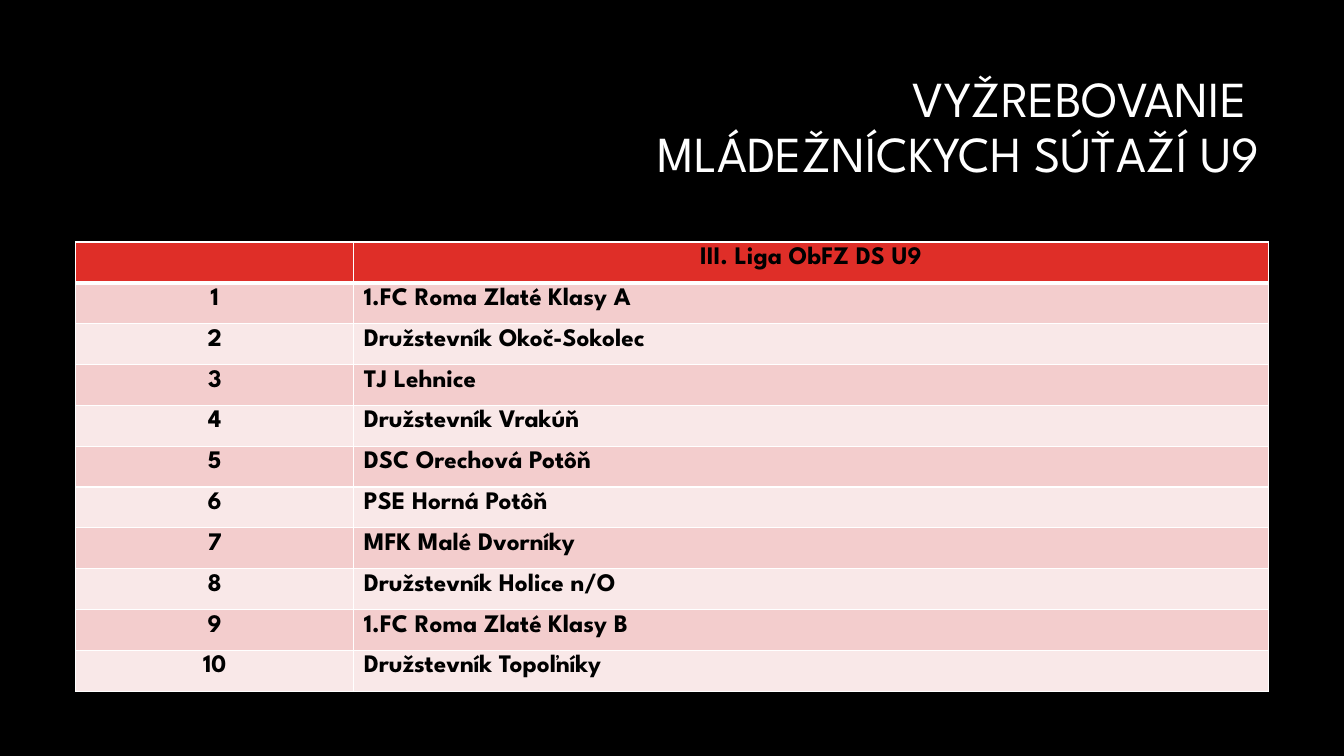
import pptx
import pptx.util
import pptx.dml.color
import pptx.enum.text
import pptx.oxml
import pptx.oxml.ns
import lxml.etree

Inches = pptx.util.Inches
ALIGN = pptx.enum.text.PP_ALIGN
FACE = "League Spartan"
BLACK, WHITE, RED = "000000", "FFFFFF", "DF2E28"
BANDS = ["F3CDCD", "F9E8E8"]
HEAD = "III. Liga ObFZ DS U9"
TEAMS = [
    "1.FC Roma Zlaté Klasy A",
    "Družstevník Okoč-Sokolec",
    "TJ Lehnice",
    "Družstevník Vrakúň",
    "DSC Orechová Potôň",
    "PSE Horná Potôň",
    "MFK Malé Dvorníky",
    "Družstevník Holice n/O",
    "1.FC Roma Zlaté Klasy B",
    "Družstevník Topoľníky",
]


def paint(fill, tint):
    fill.solid()
    fill.fore_color.rgb = pptx.dml.color.RGBColor.from_string(tint)


def style(para, size, tint, bold, align):
    para.alignment = align
    font = para.font
    font.name = FACE
    font.size = pptx.util.Pt(size)
    font.bold = bold
    paint(font.fill, tint)


def edge(cell, side, width):
    props = cell._tc.get_or_add_tcPr()
    line = lxml.etree.SubElement(props, pptx.oxml.ns.qn("a:ln" + side))
    line.set("w", str(pptx.util.Pt(width)))
    fill = lxml.etree.SubElement(line, pptx.oxml.ns.qn("a:solidFill"))
    tint = lxml.etree.SubElement(fill, pptx.oxml.ns.qn("a:srgbClr"))
    tint.set("val", WHITE)


def add_title(slide):
    title = slide.shapes.title
    title.left, title.top = Inches(3.17), Inches(0.84)
    title.width, title.height = Inches(9.42), Inches(1.41)
    frame = title.text_frame
    frame.word_wrap = True
    frame.auto_size = pptx.enum.text.MSO_AUTO_SIZE.NONE
    frame.vertical_anchor = pptx.enum.text.MSO_ANCHOR.MIDDLE
    frame.margin_bottom = Inches(0.59)
    frame.text = "VYŽREBOVANIE \vMLÁDEŽNÍCKYCH SÚŤAŽÍ U9"
    para = frame.paragraphs[0]
    para.line_spacing = 0.9
    style(para, 36, WHITE, False, ALIGN.RIGHT)


def fill_cell(cell, text, tint, align, top, base):
    for side, width in zip("LRTB", (1, 1, top, base)):
        edge(cell, side, width)
    paint(cell.fill, tint)
    cell.text = text
    style(cell.text_frame.paragraphs[0], 18, BLACK, True, align)


def add_draw(slide):
    rows = [("", HEAD)] + [(str(n), team) for n, team in enumerate(TEAMS, 1)]
    table = slide.shapes.add_table(
        len(rows), 2, Inches(0.75), Inches(2.4), Inches(11.83), Inches(4.46)
    ).table
    table.columns[0].width = Inches(2.76)
    table.columns[1].width = Inches(9.07)
    for r, row in enumerate(rows):
        tint = BANDS[(r - 1) % 2] if r else RED
        top = 3 if r == 1 else 1
        base = 1 if r else 3
        for c, text in enumerate(row):
            align = ALIGN.LEFT if r and c else ALIGN.CENTER
            fill_cell(table.cell(r, c), text, tint, align, top, base)


def main():
    deck = pptx.Presentation()
    deck.slide_width, deck.slide_height = Inches(13.33), Inches(7.5)
    slide = deck.slides.add_slide(deck.slide_layouts[5])
    paint(slide.background.fill, BLACK)
    add_title(slide)
    add_draw(slide)
    deck.save("out.pptx")


if __name__ == "__main__":
    main()
